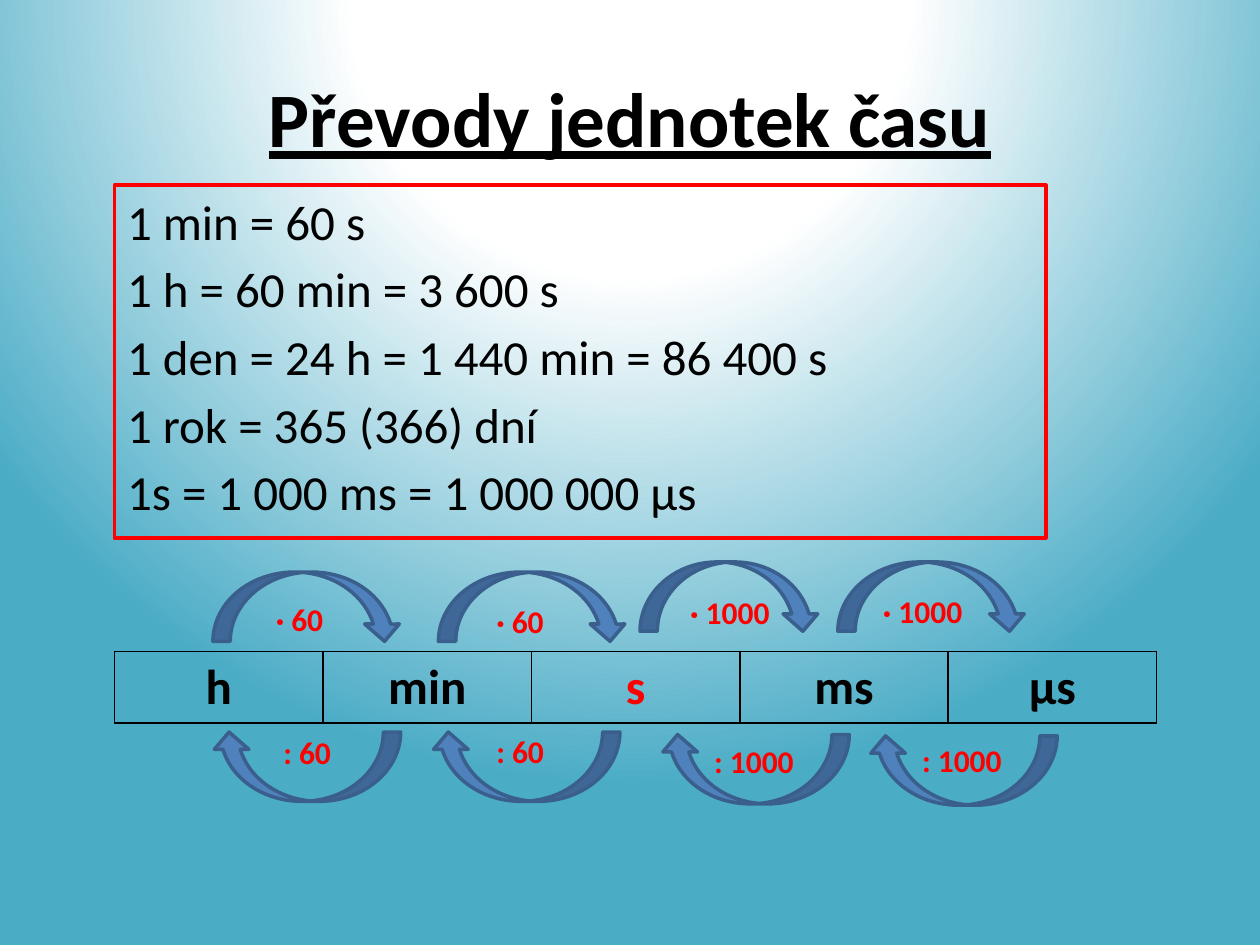
from pptx import Presentation
from pptx.dml.color import RGBColor
from pptx.enum.shapes import MSO_SHAPE
from pptx.enum.text import MSO_ANCHOR, MSO_AUTO_SIZE, PP_ALIGN
from pptx.oxml import parse_xml
from pptx.oxml.ns import nsdecls, qn
from pptx.util import Inches, Pt

INK = {"text": "000000", "red": "FF0000", "blue": "4F81BD",
       "edge": "3A5F8C", "white": "FFFFFF", "teal": "4BACC6"}
FONT = "Calibri"
COLS, ROWS = 100, 75  # grid over the slide
WIDE, HIGH = Inches(10), Inches(7.5)


def place(box):
    """Turn a box in grid columns and rows into slide lengths."""
    x, y, w, h = box
    return [int(n) for n in (x * WIDE / COLS, y * HIGH / ROWS,
                             w * WIDE / COLS, h * HIGH / ROWS)]


def color(name):
    return RGBColor.from_string(INK[name])


def write(frame, text, size=28, ink="text", bold=False, under=False,
          align=PP_ALIGN.LEFT, anchor=MSO_ANCHOR.TOP, gap=0, wrap=True):
    frame.word_wrap = wrap
    frame.vertical_anchor = anchor
    for i, line in enumerate(text.split("\n")):
        par = frame.add_paragraph() if i else frame.paragraphs[0]
        par.alignment = align
        par.space_before = Pt(gap)
        run = par.add_run()
        run.text = line
        font = run.font
        font.name, font.size = FONT, Pt(size)
        font.bold, font.underline = bold, under
        font.color.rgb = color(ink)


def paint(shape, fill, line):
    shape.shadow.inherit = False
    if fill:
        shape.fill.solid()
        shape.fill.fore_color.rgb = color(fill)
    else:
        shape.fill.background()
    shape.line.color.rgb = color(line)
    shape.line.width = Pt(2)


def back(slide):
    stops = "".join(
        f'<a:gs pos="{pos * 1000}"><a:srgbClr val="{INK[name]}"/></a:gs>'
        for pos, name in ((0, "white"), (35, "white"), (100, "teal")))
    bg = parse_xml(
        f'<p:bg {nsdecls("p", "a")}><p:bgPr><a:gradFill rotWithShape="1">'
        f'<a:gsLst>{stops}</a:gsLst><a:path path="circle">'
        '<a:fillToRect l="50000" t="-80000" r="50000" b="180000"/></a:path>'
        '</a:gradFill><a:effectLst/></p:bgPr></p:bg>')
    slide.element.find(qn("p:cSld")).insert(0, bg)


def title(slide, box, text):
    frame = slide.shapes.add_textbox(*place(box)).text_frame
    write(frame, text, size=44, bold=True, under=True,
          align=PP_ALIGN.CENTER, anchor=MSO_ANCHOR.MIDDLE)


def facts(slide, box, text):
    shape = slide.shapes.add_shape(MSO_SHAPE.RECTANGLE, *place(box))
    paint(shape, None, "red")
    write(shape.text_frame, text, gap=5)


def border(cell):
    props = cell._tc.get_or_add_tcPr()
    for i, side in enumerate(("lnL", "lnR", "lnT", "lnB")):
        props.insert(i, parse_xml(
            f'<a:{side} {nsdecls("a")} w="12700"><a:solidFill>'
            f'<a:srgbClr val="{INK["text"]}"/></a:solidFill></a:{side}>'))


def units(slide, box, names, base):
    spot = place(box)
    table = slide.shapes.add_table(1, len(names), *spot).table
    table.first_row = table.horz_banding = False
    for i, name in enumerate(names):
        table.columns[i].width = spot[2] // len(names)
        cell = table.cell(0, i)
        cell.fill.background()
        border(cell)
        write(cell.text_frame, name, bold=True, align=PP_ALIGN.CENTER,
              ink="red" if name == base else "text")


def hop(slide, box, spot, text, turn=0):
    """Curved arrow with its factor, as one group."""
    group = slide.shapes.add_group_shape()
    arrow = group.shapes.add_shape(MSO_SHAPE.CURVED_DOWN_ARROW, *place(box))
    arrow.rotation = turn
    paint(arrow, "blue", "edge")
    width = 8.3 if "1000" in text else 5.8
    frame = group.shapes.add_textbox(*place((*spot, width, 4))).text_frame
    write(frame, text, size=18, ink="red", bold=True, wrap=False)
    frame.auto_size = MSO_AUTO_SIZE.SHAPE_TO_FIT_TEXT


def main():
    deck = Presentation()
    deck.slide_width, deck.slide_height = WIDE, HIGH
    slide = deck.slides.add_slide(deck.slide_layouts[6])
    back(slide)
    title(slide, (5, 3, 90, 12.5), "Převody jednotek času")
    facts(slide, (9.1, 14.7, 73.9, 28),
          "1 min = 60 s\n1 h = 60 min = 3 600 s\n"
          "1 den = 24 h = 1 440 min = 86 400 s\n"
          "1 rok = 365 (366) dní\n1s = 1 000 ms = 1 000 000 μs")
    units(slide, (9.1, 51.7, 82.7, 5.7), ["h", "min", "s", "ms", "μs"], "s")

    # Arrow left, top, width; label left, top; factor
    above = [(16.9, 45.4, 15, 20.9, 47.1, 60), (34.8, 45.4, 15, 38.4, 47.3, 60),
             (50.8, 44.6, 14.3, 53.8, 46.6, 1000),
             (66.5, 44.6, 15, 69.1, 46.5, 1000)]
    below = [(16.8, 58.1, 15, 21.5, 57.7, 60), (34.2, 58.1, 15, 38.4, 57.6, 60),
             (52.4, 58.3, 15, 55.7, 58.4, 1000),
             (68.9, 58.4, 15, 72.2, 58.3, 1000)]
    for hops, sign, turn in ((above, "·", 0), (below, ":", 180)):
        for x, y, w, left, top, rate in hops:
            hop(slide, (x, y, w, 5.5), (left, top), f"{sign} {rate}", turn)
    deck.save("out.pptx")


if __name__ == "__main__":
    main()
